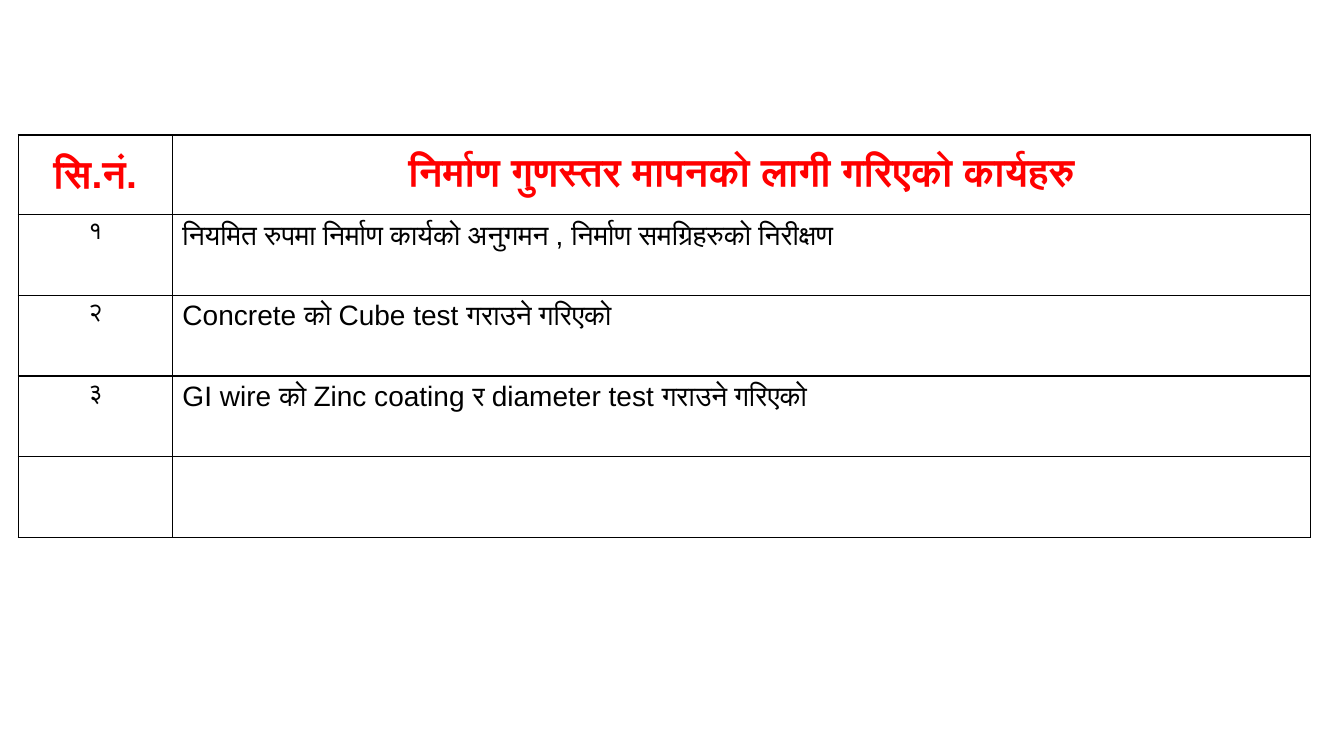
from lxml.etree import SubElement
from pptx import Presentation
from pptx.dml.color import RGBColor
from pptx.enum.text import MSO_ANCHOR as Anchor, PP_ALIGN as Align
from pptx.oxml.ns import qn
from pptx.util import Pt

PX = 9144
BLACK = RGBColor(0, 0, 0)
RED = RGBColor(255, 0, 0)

COLUMN_WIDTHS = (153, 1129)
ROW_HEIGHTS = (79, 80, 80, 80, 80)
ROWS = (
    ("सि.नं.", "निर्माण गुणस्तर मापनको लागी गरिएको कार्यहरु"),
    ("१", "नियमित रुपमा निर्माण कार्यको अनुगमन , निर्माण समग्रिहरुको निरीक्षण"),
    ("२", "Concrete को Cube test गराउने गरिएको"),
    ("३", "GI wire को Zinc coating र diameter test गराउने गरिएको"),
    ("", ""),
)
HEADER = {"size": Pt(28), "bold": True}
HEADER_FORMATS = ({**HEADER, "name": "Arial"}, {**HEADER, "name": "Lato"})
BODY = {"name": "Arial", "bold": False}
BODY_FORMATS = ({**BODY, "size": Pt(18)}, {**BODY, "size": Pt(20)})


def add_borders(cell):
    """Draw a thin black line on every side of a cell."""
    properties = cell._tc.get_or_add_tcPr()
    for index, side in enumerate(("lnL", "lnR", "lnT", "lnB")):
        line = properties.makeelement(qn(f"a:{side}"), {"w": str(Pt(1))})
        fill = SubElement(line, qn("a:solidFill"))
        SubElement(fill, qn("a:srgbClr"), val=str(BLACK))
        properties.insert(index, line)


def fill_cell(cell, text, formats, color, align, anchor):
    """Write formatted text into a bordered cell without a fill."""
    cell.fill.background()
    add_borders(cell)
    cell.vertical_anchor = anchor
    if not text:
        return
    paragraph = cell.text_frame.paragraphs[0]
    paragraph.alignment = align
    run = paragraph.add_run()
    run.text = text
    for name, value in formats.items():
        setattr(run.font, name, value)
    run.font.color.rgb = color


def add_work_table(slide, left, top):
    """Add the table of quality control works."""
    size = sum(COLUMN_WIDTHS) * PX, sum(ROW_HEIGHTS) * PX
    shape = slide.shapes.add_table(len(ROWS), len(COLUMN_WIDTHS), left * PX, top * PX, *size)
    table = shape.table
    table.first_row = table.horz_banding = False
    for column, width in zip(table.columns, COLUMN_WIDTHS):
        column.width = width * PX
    for row_index, (texts, height) in enumerate(zip(ROWS, ROW_HEIGHTS)):
        table.rows[row_index].height = height * PX
        is_header = row_index == 0
        formats = HEADER_FORMATS if is_header else BODY_FORMATS
        color = RED if is_header else BLACK
        anchor = Anchor.MIDDLE if is_header else Anchor.TOP
        for column_index, text in enumerate(texts):
            align = Align.CENTER if is_header or column_index == 0 else Align.LEFT
            cell = table.cell(row_index, column_index)
            fill_cell(cell, text, formats[column_index], color, align, anchor)


def main():
    """Build and save the slide."""
    presentation = Presentation()
    presentation.slide_width = 1333 * PX
    presentation.slide_height = 750 * PX
    slide = presentation.slides.add_slide(presentation.slide_layouts[6])
    add_work_table(slide, 18, 134)
    presentation.save("out.pptx")


if __name__ == "__main__":
    main()
